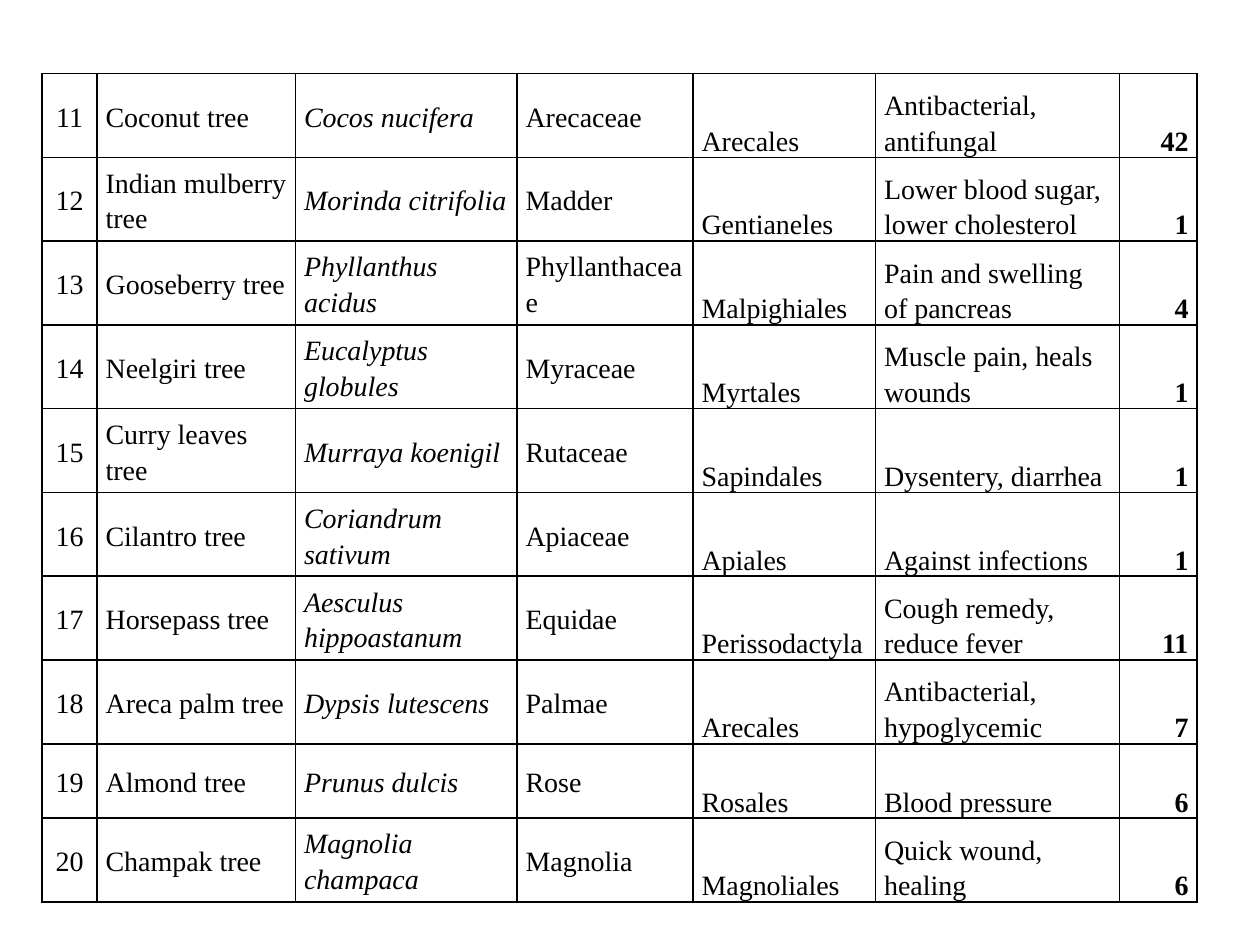
from lxml.etree import SubElement
from pptx import Presentation
from pptx.dml.color import RGBColor
from pptx.enum.text import MSO_ANCHOR as Anchor, PP_ALIGN as Align
from pptx.oxml.ns import qn
from pptx.util import Pt

COLORS = {"text": "000000", "border": "000000", "cell": "FFFFFF"}
FONT = "Times New Roman"
TREES = [
    ("11", "Coconut tree", "Cocos nucifera", "Arecaceae", "Arecales", "Antibacterial, antifungal", "42"),
    ("12", "Indian mulberry tree", "Morinda citrifolia", "Madder", "Gentianeles",
     "Lower blood sugar, lower cholesterol", "1"),
    ("13", "Gooseberry tree", "Phyllanthus acidus", "Phyllanthaceae", "Malpighiales",
     "Pain and swelling of pancreas", "4"),
    ("14", "Neelgiri tree", "Eucalyptus globules", "Myraceae", "Myrtales", "Muscle pain, heals wounds", "1"),
    ("15", "Curry leaves tree", "Murraya koenigil", "Rutaceae", "Sapindales", "Dysentery, diarrhea", "1"),
    ("16", "Cilantro tree", "Coriandrum sativum", "Apiaceae", "Apiales", "Against infections", "1"),
    ("17", "Horsepass tree", "Aesculus hippoastanum", "Equidae", "Perissodactyla",
     "Cough remedy, reduce fever", "11"),
    ("18", "Areca palm tree", "Dypsis lutescens", "Palmae", "Arecales", "Antibacterial, hypoglycemic", "7"),
    ("19", "Almond tree", "Prunus dulcis", "Rose", "Rosales", "Blood pressure", "6"),
    ("20", "Champak tree", "Magnolia champaca", "Magnolia", "Magnoliales", "Quick wound, healing", "6"),
]
COLUMNS = [
    {"width": 31.5, "align": Align.CENTER, "anchor": Anchor.MIDDLE},
    {"width": 113.4, "align": Align.LEFT, "anchor": Anchor.MIDDLE},
    {"width": 126.6, "align": Align.LEFT, "anchor": Anchor.MIDDLE, "italic": True},
    {"width": 100.6, "align": Align.LEFT, "anchor": Anchor.MIDDLE},
    {"width": 104.3, "align": Align.LEFT, "anchor": Anchor.BOTTOM},
    {"width": 139.4, "align": Align.LEFT, "anchor": Anchor.BOTTOM},
    {"width": 44.3, "align": Align.RIGHT, "anchor": Anchor.BOTTOM, "bold": True},
]
LEFT, TOP = 24, 42
ROW_HEIGHT, SHORT_ROW_HEIGHT = 47.88, 42.5
SHORT_ROWS = {"19"}


def add_borders(cell):
    properties = cell._tc.get_or_add_tcPr()
    for position, side in enumerate(("lnL", "lnR", "lnT", "lnB")):
        line = SubElement(properties, qn(f"a:{side}"), w=str(Pt(1)))
        fill = SubElement(line, qn("a:solidFill"))
        SubElement(fill, qn("a:srgbClr"), val=COLORS["border"])
        properties.insert(position, line)


def fill_cell(cell, text, column):
    cell.fill.solid()
    cell.fill.fore_color.rgb = RGBColor.from_string(COLORS["cell"])
    cell.margin_left = cell.margin_right = Pt(4.9)
    cell.margin_top = cell.margin_bottom = Pt(0)
    cell.vertical_anchor = column["anchor"]
    para = cell.text_frame.paragraphs[0]
    para.alignment = column["align"]
    para.line_spacing = 1.15
    span = para.add_run()
    span.text = text
    span.font.name = FONT
    span.font.size = Pt(16)
    span.font.bold = column.get("bold", False)
    span.font.italic = column.get("italic", False)
    span.font.color.rgb = RGBColor.from_string(COLORS["text"])
    add_borders(cell)


def main():
    deck = Presentation()
    deck.slide_width, deck.slide_height = Pt(720), Pt(540)
    page = deck.slides.add_slide(deck.slide_layouts[6])
    heights = [SHORT_ROW_HEIGHT if tree[0] in SHORT_ROWS else ROW_HEIGHT for tree in TREES]
    width = sum(column["width"] for column in COLUMNS)
    table = page.shapes.add_table(
        len(TREES), len(COLUMNS), Pt(LEFT), Pt(TOP), Pt(width), Pt(sum(heights))
    ).table
    table.first_row = table.horz_banding = False
    for index, column in enumerate(COLUMNS):
        table.columns[index].width = Pt(column["width"])
    for row, (tree, height) in enumerate(zip(TREES, heights)):
        table.rows[row].height = Pt(height)
        for index, (text, column) in enumerate(zip(tree, COLUMNS)):
            fill_cell(table.cell(row, index), text, column)
    deck.save("out.pptx")


if __name__ == "__main__":
    main()
